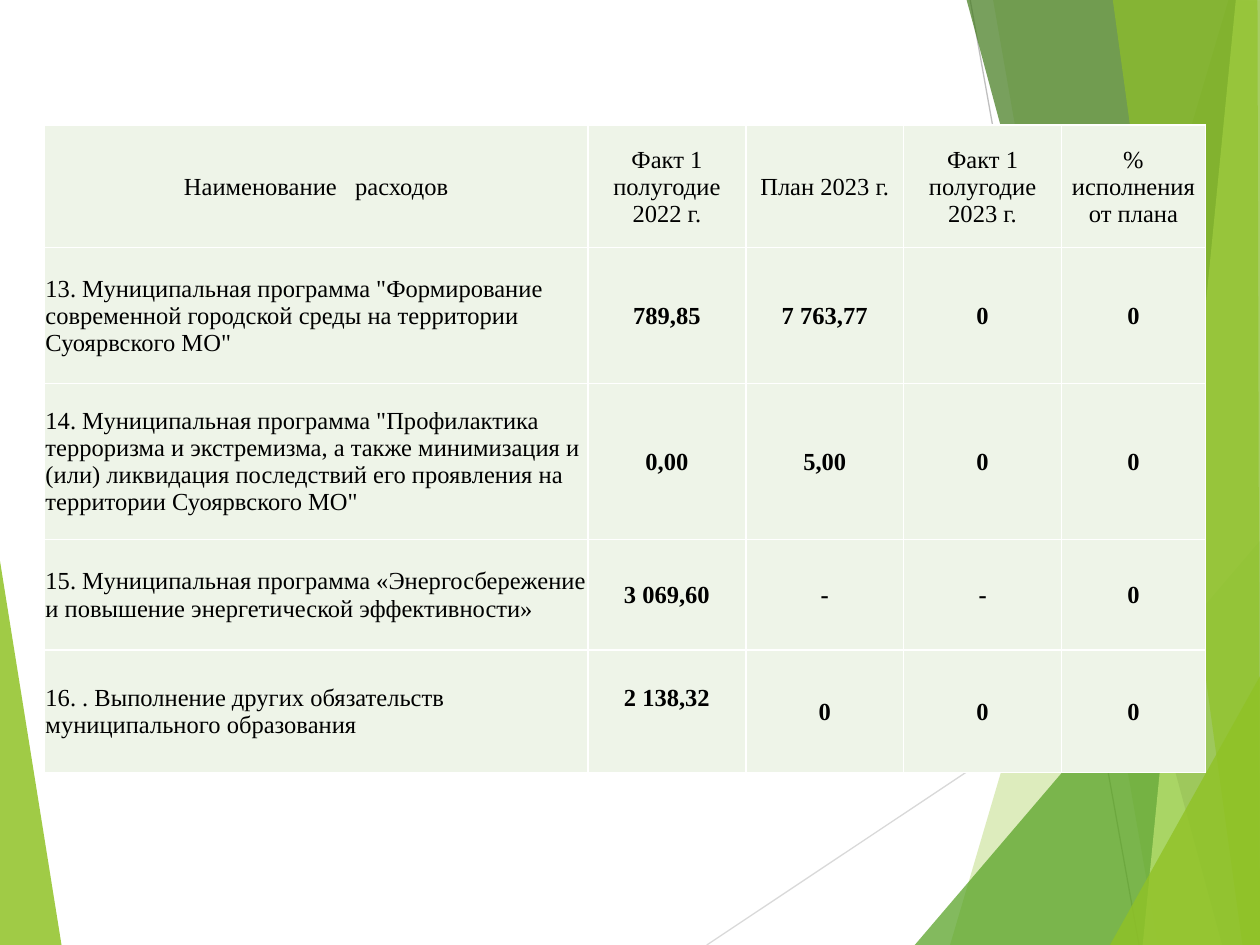
from lxml import etree
from pptx import Presentation
from pptx.dml.color import RGBColor
from pptx.enum.shapes import MSO_CONNECTOR
from pptx.enum.text import MSO_ANCHOR, PP_ALIGN
from pptx.oxml.ns import qn
from pptx.util import Pt

LIME = RGBColor(0x90, 0xC2, 0x26)
GREEN = RGBColor(0x54, 0xA0, 0x21)
DARK_GREEN = RGBColor(0x3F, 0x78, 0x19)
PALE_LIME = RGBColor(0xC0, 0xE4, 0x74)
LIGHT_GRAY = RGBColor(0xD9, 0xD9, 0xD9)
GRAY = RGBColor(0xBF, 0xBF, 0xBF)
CELL_GREEN = RGBColor(0xEE, 0xF4, 0xE8)
WHITE = RGBColor(0xFF, 0xFF, 0xFF)
BLACK = RGBColor(0, 0, 0)

deck = Presentation()
deck.slide_width, deck.slide_height = Pt(720), Pt(540)
slide = deck.slides.add_slide(deck.slide_layouts[6])


def write(cell, text, size=14, bold=False, align=PP_ALIGN.CENTER, color=BLACK):
    paragraph = cell.text_frame.paragraphs[0]
    paragraph.alignment = align
    run = paragraph.add_run()
    run.text = text
    run.font.name = "Times New Roman"
    run.font.size = Pt(size)
    run.font.bold = bold
    run.font.color.rgb = color


rays = [
    ((403.9, 540), (720.7, 329), LIGHT_GRAY),
    ((554.4, 0), (650.9, 540), GRAY),
]
for start, end, color in rays:
    ray = slide.shapes.add_connector(
        MSO_CONNECTOR.STRAIGHT, *(Pt(v) for v in start + end))
    ray.line.color.rgb = color
    ray.line.width = Pt(0.75)
    etree.SubElement(ray._element.spPr, qn("a:effectLst"))

facets = [
    (LIME, 85, [(-0.7, 316), (35.3, 540.7), (-0.7, 540)]),
    (LIME, 30, [(702, 0), (542.9, 540), (721, 540.7), (720.7, 0.7)]),
    (LIME, 20, [(567.4, -0.7), (661.7, 540), (720.7, 540), (720.7, -0.7)]),
    (GREEN, 72, [(522.7, 540), (720, 309), (720.7, 540)]),
    (DARK_GREEN, 70, [(552.2, -0.7), (698.4, 540), (720.7, 540), (720.7, -0.7)]),
    (PALE_LIME, 70, [(706.3, -0.7), (653, 540), (720.7, 540), (720, -0.7)]),
    (LIME, 65, [(635.8, -0.7), (710, 540), (720, 540), (718.6, -0.7)]),
    (LIME, 80, [(634.3, 540), (720.7, 385.2), (720.7, 540)]),
]
for color, opacity, corners in facets:
    outline = [(Pt(x), Pt(y)) for x, y in corners]
    builder = slide.shapes.build_freeform(*outline[0])
    builder.add_line_segments(outline[1:], close=True)
    facet = builder.convert_to_shape()
    facet.shadow.inherit = False
    facet.line.fill.background()
    facet.fill.solid()
    facet.fill.fore_color.rgb = color
    tint = facet._element.spPr.find(".//" + qn("a:srgbClr"))
    etree.SubElement(tint, qn("a:alpha"), val=str(opacity * 1000))

expenses = [
    ("Наименование   расходов", "Факт 1 полугодие 2022 г.", "План 2023 г.",
     "Факт 1 полугодие 2023 г.", "% исполнения от плана"),
    ("13. Муниципальная программа \"Формирование современной городской среды "
     "на территории Суоярвского МО\"", "789,85", "7 763,77", "0", "0"),
    ("14. Муниципальная программа \"Профилактика терроризма и экстремизма, "
     "а также минимизация и (или) ликвидация последствий его проявления "
     "на территории Суоярвского МО\"", "0,00", "5,00", "0", "0"),
    ("15. Муниципальная программа «Энергосбережение и повышение "
     "энергетической эффективности»", "3 069,60", "-", "-", "0"),
    ("16. . Выполнение других обязательств муниципального образования",
     "2 138,32", "0", "0", "0"),
]
column_widths = [310.6, 90.2, 90.2, 90.2, 82.2]
row_heights = [70, 77.8, 89, 63.2, 70]
table = slide.shapes.add_table(
    len(row_heights), len(column_widths), Pt(25.4), Pt(71.5),
    Pt(sum(column_widths)), Pt(sum(row_heights))).table
for column, width in zip(table.columns, column_widths):
    column.width = Pt(width)
for row, height in zip(table.rows, row_heights):
    row.height = Pt(height)

for r, expense in enumerate(expenses):
    for c, text in enumerate(expense):
        cell = table.cell(r, c)
        cell.vertical_anchor = MSO_ANCHOR.MIDDLE
        cell.margin_left = cell.margin_right = cell.margin_top = Pt(0.6)
        cell.margin_bottom = Pt(0)
        is_name = r > 0 and c == 0
        write(cell, text, bold=r > 0 and c > 0,
              align=PP_ALIGN.LEFT if is_name else PP_ALIGN.CENTER)
        properties = cell._tc.get_or_add_tcPr()
        for side in ("a:lnL", "a:lnR", "a:lnT", "a:lnB"):
            border = etree.SubElement(properties, qn(side), w=str(Pt(1)))
            paint = etree.SubElement(border, qn("a:solidFill"))
            etree.SubElement(paint, qn("a:srgbClr"), val=str(WHITE))
        cell.fill.solid()
        cell.fill.fore_color.rgb = CELL_GREEN

table.cell(4, 1).margin_bottom = Pt(15.5)

deck.save("out.pptx")
